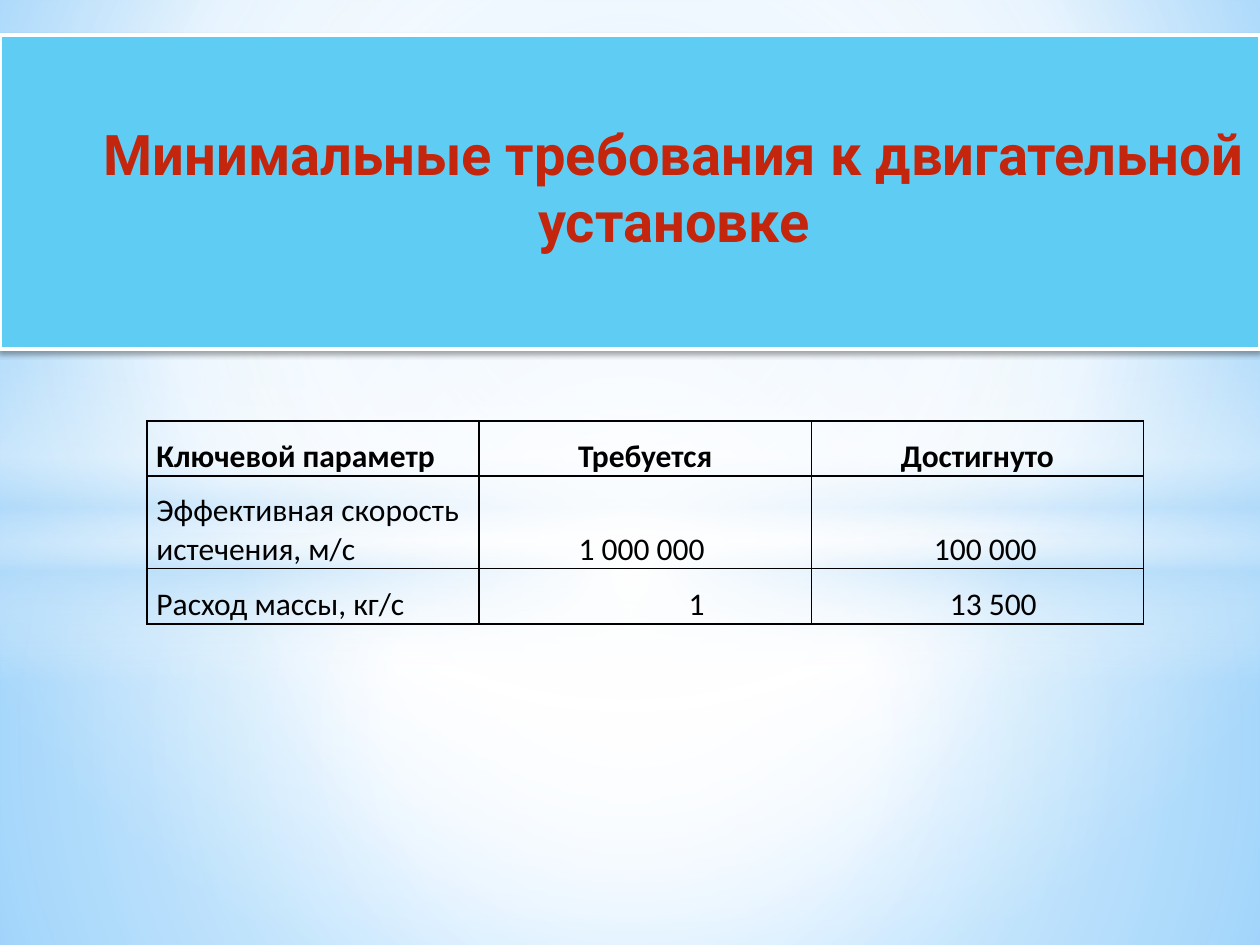
import pptx
import pptx.util
import pptx.dml.color
import pptx.enum.shapes
import pptx.enum.text
import pptx.oxml
import pptx.oxml.ns
import lxml.etree

Pt = pptx.util.Pt
RGB = pptx.dml.color.RGBColor
Shape = pptx.enum.shapes.MSO_SHAPE
Align = pptx.enum.text.PP_ALIGN
Anchor = pptx.enum.text.MSO_ANCHOR
qn = pptx.oxml.ns.qn

WHITE = RGB(0xFF, 0xFF, 0xFF)
BLACK = RGB(0x00, 0x00, 0x00)
SKY = RGB(0x9E, 0xD5, 0xFF)
BLUE = RGB(0x5B, 0xB9, 0xFF)
PALE = RGB(0xB4, 0xDC, 0xFA)
CYAN = RGB(0x5E, 0xCC, 0xF3)
RED = RGB(0xC3, 0x26, 0x0C)

MID = (50, 50, 50, 50)
ROWS = [
    ("Ключевой параметр", "Требуется", "Достигнуто"),
    ("Эффективная скорость истечения, м/с", "1 000 000", "100 000"),
    ("Расход массы, кг/с", "1", "13 500"),
]


def blend(root, stops, focus=None):
    """Set the gradient under root: circular round focus, else top to bottom."""
    grad = next(root.iter(qn("a:gradFill")))
    for part in list(grad):
        grad.remove(part)
    sub = lxml.etree.SubElement
    row = sub(grad, qn("a:gsLst"))
    for pos, tint, alpha in stops:
        stop = sub(row, qn("a:gs"), pos=str(pos * 1000))
        tone = sub(stop, qn("a:srgbClr"), val=str(tint))
        if alpha < 100:
            sub(tone, qn("a:alpha"), val=str(alpha * 1000))
    if focus:
        ring = sub(grad, qn("a:path"), path="circle")
        sides = {k: str(v * 1000) for k, v in zip("ltrb", focus)}
        sub(ring, qn("a:fillToRect"), **sides)
    else:
        sub(grad, qn("a:lin"), ang="5400000", scaled="0")


def glow(slide, kind, box, stops, focus=None):
    """Add one soft, borderless gradient shape."""
    shape = slide.shapes.add_shape(kind, *map(Pt, box))
    shape.shadow.inherit = False
    shape.line.fill.background()
    shape.fill.gradient()
    blend(shape._element, stops, focus)


def scene(slide, box):
    """Paint the background and its layers of light."""
    x, y, w, h = box
    slide.background.fill.gradient()
    blend(slide._element, [(0, SKY, 100), (60, WHITE, 100), (100, BLUE, 100)],
          (20, 10, 20, 60))
    split = 304.5
    glow(slide, Shape.RECTANGLE, (x, y + split, w, h - split),
         [(0, WHITE, 91), (37, WHITE, 76), (100, PALE, 79)], MID)
    glow(slide, Shape.RECTANGLE, (x, y, w, split),
         [(0, WHITE, 89), (48, WHITE, 62), (100, PALE, 79)], MID)
    glow(slide, Shape.RECTANGLE, (x, y + 209, w, 180),
         [(0, WHITE, 0), (29, WHITE, 30), (45, PALE, 40), (55, WHITE, 26),
          (65, PALE, 60), (100, WHITE, 0)])
    glow(slide, Shape.OVAL, (x, y + 126, w, 402),
         [(0, WHITE, 100), (54, WHITE, 0)], MID)


def title(slide, box):
    """Add the title band."""
    band = slide.shapes.add_shape(Shape.RECTANGLE, *map(Pt, box))
    band.shadow.inherit = False
    band.fill.solid()
    band.fill.fore_color.rgb = CYAN
    band.line.color.rgb = WHITE
    band.line.width = Pt(2)
    cast = next(band._element.iter(qn("a:effectLst")))
    cast.append(pptx.oxml.parse_xml(
        f'<a:outerShdw {pptx.oxml.ns.nsdecls("a")} blurRad="38100" dist="25400" '
        'dir="5400000" rotWithShape="0"><a:srgbClr val="000000">'
        '<a:alpha val="35000"/></a:srgbClr></a:outerShdw>'))
    frame = band.text_frame
    frame.word_wrap = True
    frame.vertical_anchor = Anchor.MIDDLE
    frame.margin_left = Pt(57.6)
    frame.margin_bottom = Pt(10)
    frame.text = "Минимальные требования к двигательной установке"
    para = frame.paragraphs[0]
    para.alignment = Align.CENTER
    style(para, "Roboto", 32, RED, True)


def style(para, face, size, tint, bold):
    """Format every run of a paragraph."""
    for run in para.runs:
        font = run.font
        font.name, font.size, font.bold = face, Pt(size), bold
        font.color.rgb = tint


def edge(cell):
    """Draw a thin black border round a cell."""
    props = cell._tc.get_or_add_tcPr()
    for i, side in enumerate(("lnL", "lnR", "lnT", "lnB")):
        props.insert(i, pptx.oxml.parse_xml(
            f'<a:{side} {pptx.oxml.ns.nsdecls("a")} w="12700"><a:solidFill>'
            f'<a:srgbClr val="{BLACK}"/></a:solidFill></a:{side}>'))


def table(slide, box):
    """Add the table, with figures set flush right inside their columns."""
    frame = slide.shapes.add_table(len(ROWS), len(ROWS[0]), *map(Pt, box))
    grid = frame.table
    grid.first_row = grid.horz_banding = False
    for col in grid.columns:
        col.width = Pt(box[2] / len(ROWS[0]))
    for row, high in zip(grid.rows, (31.5, 53, 31.5)):
        row.height = Pt(high)
    for r, row in enumerate(ROWS):
        for c, text in enumerate(row):
            cell = grid.cell(r, c)
            cell.fill.background()
            edge(cell)
            cell.vertical_anchor = Anchor.BOTTOM
            cell.margin_left = cell.margin_right = Pt(5.4)
            cell.margin_top = cell.margin_bottom = 0
            cell.text_frame.text = text
            para = cell.text_frame.paragraphs[0]
            style(para, "Calibri", 18, BLACK, r == 0)
            if c and r:
                para.alignment = Align.RIGHT
                cell.margin_right = Pt(61)
            elif c:
                para.alignment = Align.CENTER


def main():
    """Build and save the slide."""
    deck = pptx.Presentation()
    deck.slide_width, deck.slide_height = Pt(720), Pt(540)
    slide = deck.slides.add_slide(deck.slide_layouts[6])
    scene(slide, (0, 0, 720, 540))
    title(slide, (0, 20, 720, 179.5))
    table(slide, (84, 240.5, 569.5, 116))
    deck.save("out.pptx")


if __name__ == "__main__":
    main()
